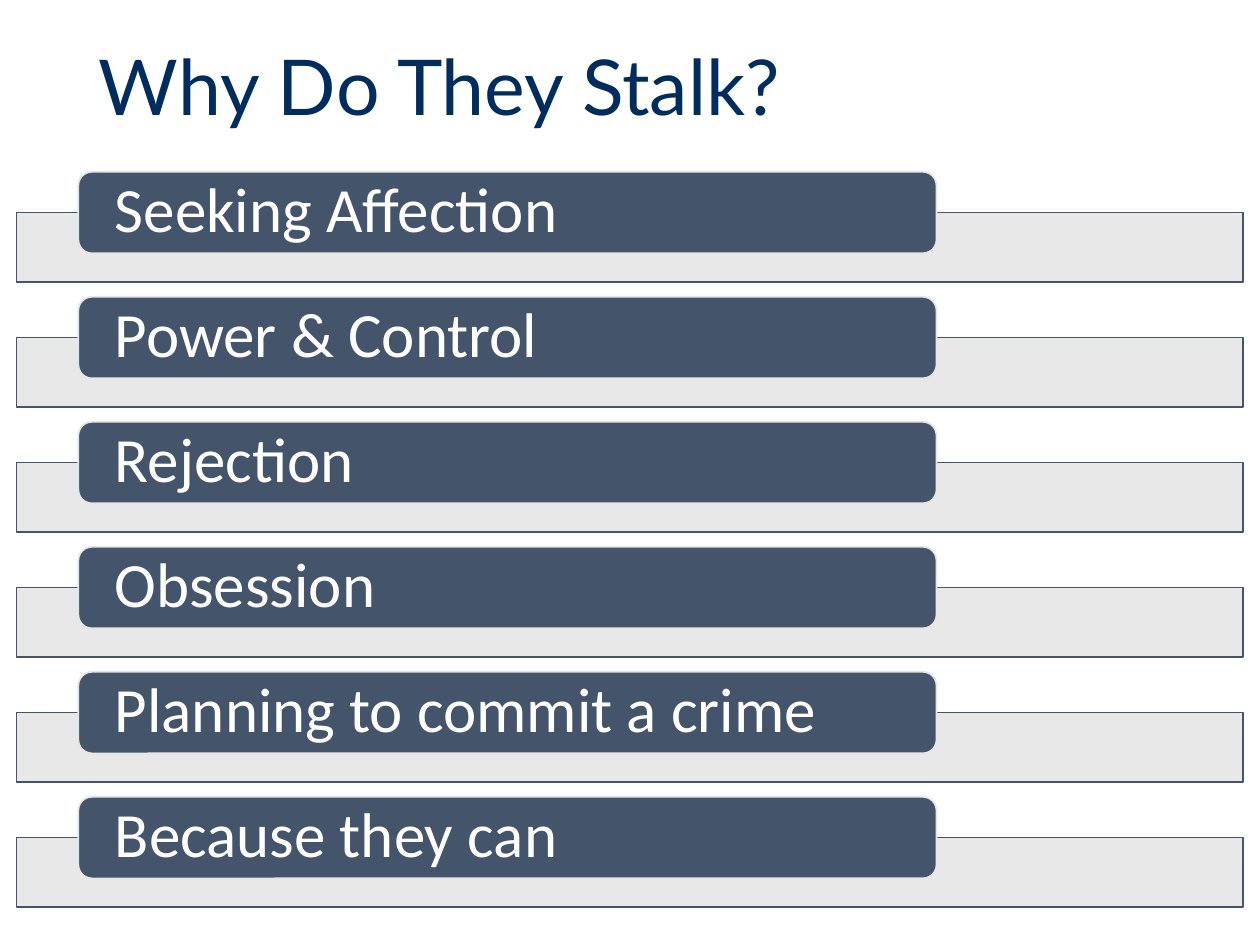
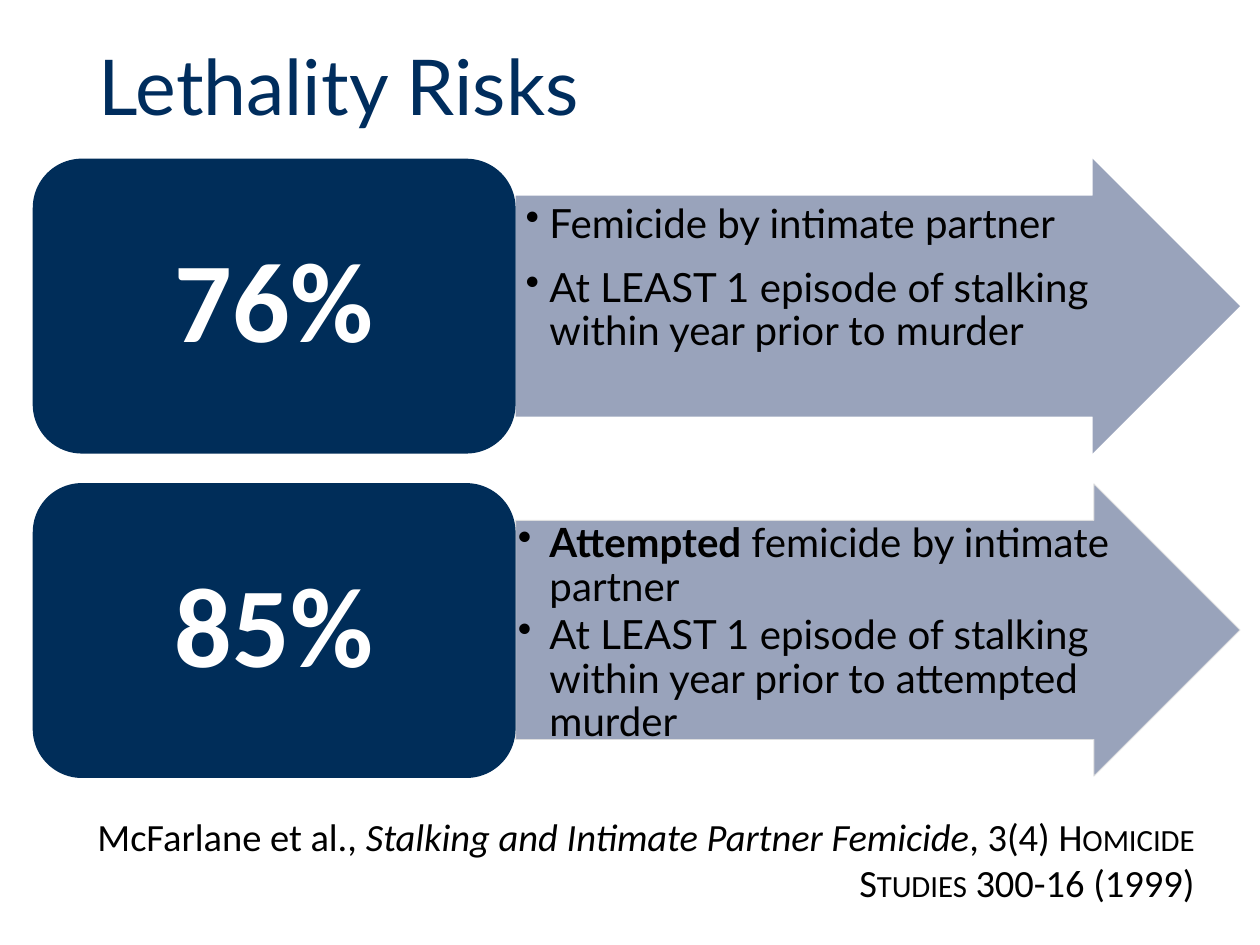
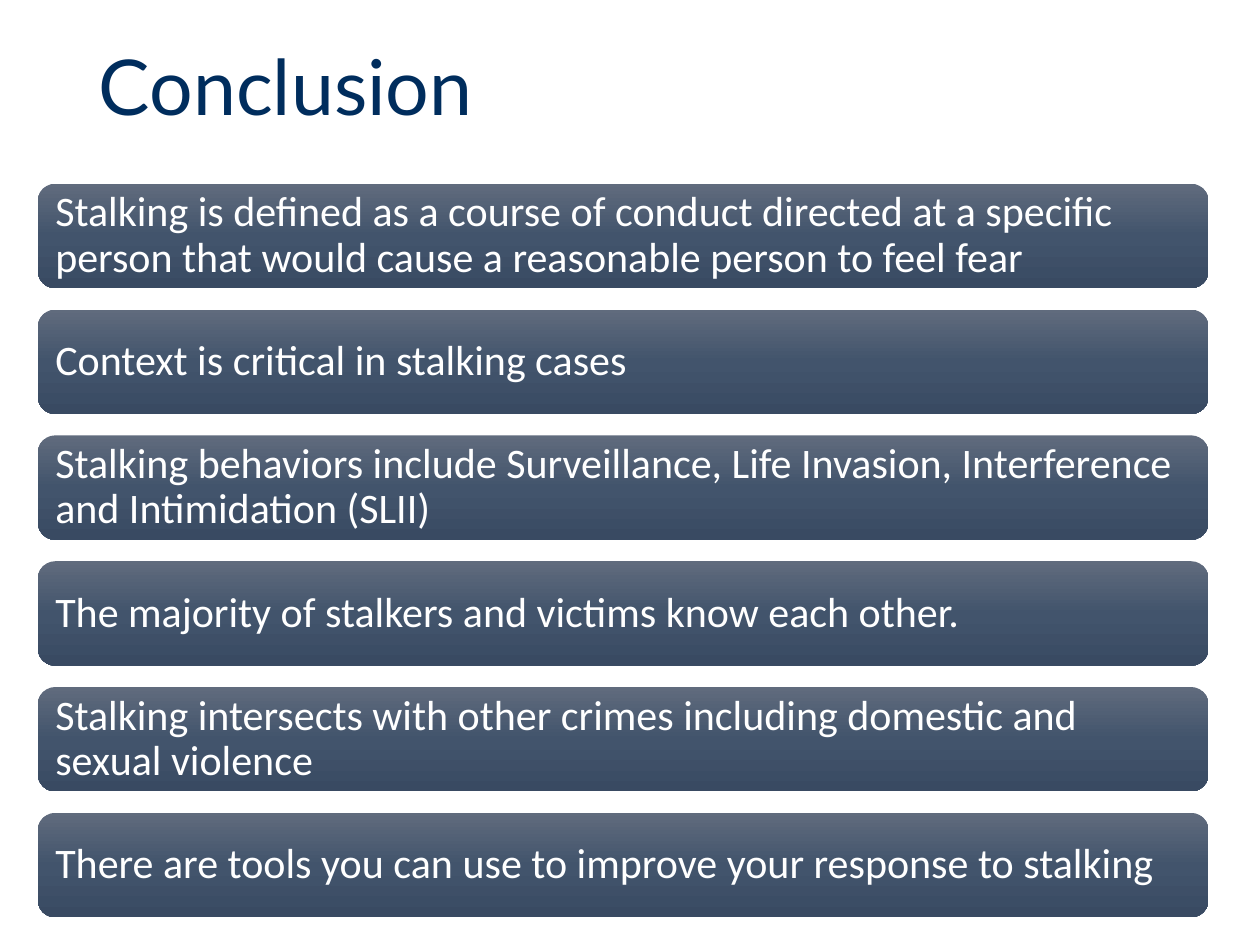
from copy import deepcopy

from pptx import Presentation
from pptx.dml.color import RGBColor
from pptx.enum.shapes import MSO_SHAPE
from pptx.enum.text import MSO_ANCHOR, PP_ALIGN
from pptx.oxml.ns import qn
from pptx.oxml.xmlchemy import OxmlElement
from pptx.util import Pt

# Shared look
NAVY, CARD_NAVY, SLATE = "002D5D", "002D59", "44546A"
PALE, ARROW_BLUE, ARROW_EDGE = "E7E6E6", "99A3BB", "E1E1E1"
BLACK, WHITE = "000000", "FFFFFF"
BAND_STOPS = [(0, "606B7D"), (0.5, "42546C"), (1, "394A62")]
TITLE_FONT, BODY_FONT = "Lato", "Calibri"


def paint(fill, color, opacity=100):
    """Give a fill a solid colour, with opacity in percent."""
    fill.solid()
    fill.fore_color.rgb = RGBColor.from_string(color)
    if opacity < 100:
        alpha = OxmlElement("a:alpha")
        alpha.set("val", str(opacity * 1000))
        fill._xPr.find(".//" + qn("a:srgbClr")).append(alpha)


def write(shape, paragraphs, size, color, font=BODY_FONT, bold=False,
          align=PP_ALIGN.LEFT, anchor=MSO_ANCHOR.MIDDLE, spacing=0.9,
          after=0, hanging=0, margins=(7.2, 3.6, 7.2, 3.6)):
    """Fill a shape with paragraphs, each a list of (text, run attributes)."""
    frame = shape.text_frame
    frame.word_wrap = True
    frame.vertical_anchor = anchor
    (frame.margin_left, frame.margin_top,
     frame.margin_right, frame.margin_bottom) = map(Pt, margins)
    for number, runs in enumerate(paragraphs):
        paragraph = frame.add_paragraph() if number else frame.paragraphs[0]
        if hanging:
            properties = paragraph._p.get_or_add_pPr()
            properties.set("marL", str(Pt(18)))
            properties.set("indent", str(-Pt(hanging)))
            bullet = OxmlElement("a:buChar")
            bullet.set("char", "•")
            properties.append(bullet)
        paragraph.alignment = align
        paragraph.line_spacing = spacing
        paragraph.space_after = Pt(after)
        for text, attributes in runs:
            run = paragraph.add_run()
            run.text = text
            run.font.name = font
            run.font.size = Pt(size)
            run.font.bold = bold
            paint(run.font.fill, color)
            for key, value in attributes.items():
                run.font._element.set(key, value)


presentation = Presentation()
presentation.slide_width, presentation.slide_height = Pt(720), Pt(540)

# Slides with their titles
slides = []
for title in ["Why Do They Stalk?", "Lethality Risks", "Conclusion"]:
    slide = presentation.slides.add_slide(presentation.slide_layouts[6])
    heading = slide.shapes.add_textbox(Pt(49.5), Pt(-0.5), Pt(621), Pt(104.4))
    write(heading, [[(title, {})]], 44, NAVY, font=TITLE_FONT)
    slides.append(slide)
motives_slide, risks_slide, conclusion_slide = slides

# Motives: a label over a pale bar
motives = ["Seeking Affection", "Power & Control", "Rejection", "Obsession",
           "Planning to commit a crime", "Because they can"]
for row, motive in enumerate(motives):
    top = 98.2 + row * 71.43
    bar = motives_slide.shapes.add_shape(
        MSO_SHAPE.RECTANGLE, Pt(9.5), Pt(top + 23.3), Pt(701), Pt(39.8))
    label = motives_slide.shapes.add_shape(
        MSO_SHAPE.ROUNDED_RECTANGLE, Pt(44.8), Pt(top), Pt(490.4), Pt(46.6))
    for part, color, edge, opacity in [(bar, PALE, SLATE, 90),
                                       (label, SLATE, PALE, 100)]:
        part.shadow.inherit = False
        paint(part.fill, color, opacity)
        paint(part.line.fill, edge)
        part.line.width = Pt(1)
    write(label, [[(motive, {})]], 36, WHITE, margins=(18.6, 0, 18.6, 0))

# Risks: a percentage card with an arrow of findings
risks = [
    ("76%", 90.7, 168.5, 21.6, 12, 13.7,
     [[("Femicide by intimate partner", {})],
      [("At LEAST 1 episode of stalking within year prior to murder", {})]]),
    ("85%", 276.5, 167, 1.4, 3, 18,
     [[("Attempted ", {"b": "1"}), ("femicide by intimate partner", {})],
      [("At LEAST 1 episode of stalking within year prior to attempted murder",
        {})]]),
]
for row, (share, top, height, right, after, hanging, findings) in enumerate(risks):
    arrow = risks_slide.shapes.add_shape(
        MSO_SHAPE.RIGHT_ARROW, Pt(294.6), Pt(top), Pt(414), Pt(height))
    arrow.adjustments[0] = 0.75
    card = risks_slide.shapes.add_shape(
        MSO_SHAPE.ROUNDED_RECTANGLE, Pt(18.7), Pt(90.7 + row * 185.4),
        Pt(275.9), Pt(168.5))
    for part, color in [(arrow, ARROW_BLUE), (card, CARD_NAVY)]:
        part.shadow.inherit = False
        paint(part.fill, color)
        part.line.fill.background()
    write(arrow, findings, 23, BLACK, font=TITLE_FONT, anchor=MSO_ANCHOR.TOP,
          after=after, hanging=hanging, margins=(1.4, 1.4, right, 1.4))
    write(card, [[(share, {})]], 65, WHITE, bold=True, align=PP_ALIGN.CENTER,
          margins=(19.4, 10, 19.4, 10))
    if row == 0:
        arrow.text_frame.paragraphs[0].line_spacing = 1.0
    else:
        paint(arrow.line.fill, ARROW_EDGE, 90)
        arrow.line.width = Pt(0.5)

# Source of the figures
citation = risks_slide.shapes.add_textbox(Pt(18.7), Pt(460.8), Pt(671), Pt(60.5))
write(citation, [[("McFarlane et al., ", {}),
                  ("Stalking and Intimate Partner Femicide", {"i": "1"}),
                  (", 3(4) ", {}),
                  ("Homicide Studies", {"cap": "small"}),
                  (" 300-16 (1999)", {})]],
      22, BLACK, align=PP_ALIGN.RIGHT, anchor=MSO_ANCHOR.TOP, spacing=1.0)

# Conclusion: a stack of shaded bands
conclusions = [
    "Stalking is defined as a course of conduct directed at a specific person "
    "that would cause a reasonable person to feel fear",
    "Context is critical in stalking cases",
    "Stalking behaviors include Surveillance, Life Invasion, Interference and "
    "Intimidation (SLII)",
    "The majority of stalkers and victims know each other.",
    "Stalking intersects with other crimes including domestic and sexual violence",
    "There are tools you can use to improve your response to stalking",
]
for row, conclusion in enumerate(conclusions):
    band = conclusion_slide.shapes.add_shape(
        MSO_SHAPE.ROUNDED_RECTANGLE, Pt(21.6), Pt(105 + row * 71.9),
        Pt(669), Pt(59.7))
    band.shadow.inherit = False
    band.line.fill.background()
    band.fill.gradient()
    band.fill.gradient_angle = 270
    stop_list = band._element.spPr.find(".//" + qn("a:gsLst"))
    stop_list.insert(1, deepcopy(stop_list[0]))
    for stop, (position, color) in zip(band.fill.gradient_stops, BAND_STOPS):
        stop.position = position
        stop.color.rgb = RGBColor.from_string(color)
    write(band, [[(conclusion, {})]], 24, WHITE, margins=(7.2, 7.2, 7.2, 7.2))

presentation.save("out.pptx")
